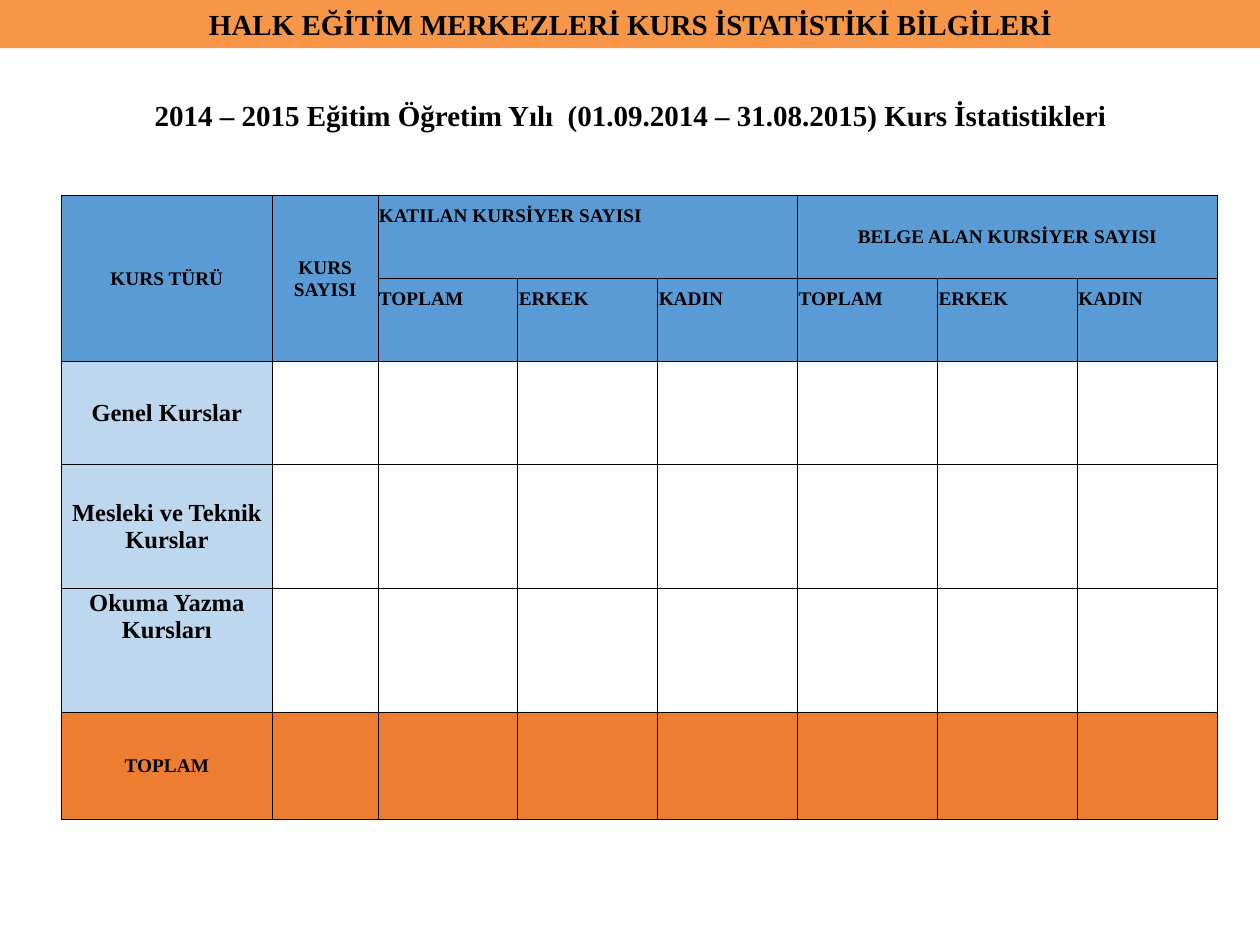
from lxml import etree
from pptx import Presentation
from pptx.dml.color import RGBColor
from pptx.enum.text import MSO_ANCHOR, PP_ALIGN
from pptx.oxml.ns import qn
from pptx.util import Cm, Pt

CENTER, LEFT = PP_ALIGN.CENTER, PP_ALIGN.LEFT
MIDDLE, TOP = MSO_ANCHOR.MIDDLE, MSO_ANCHOR.TOP

FONT = "Times New Roman"
BLACK = "000000"
BANNER_ORANGE = "F79646"
HEADER_BLUE = "5B9BD5"
COURSE_BLUE = "BDD7EE"
TOTAL_ORANGE = "ED7D31"

COLUMN_WIDTHS = [4.25, 2.13] + [2.82] * 6
ROW_HEIGHTS = [1.67, 1.67, 2.08, 2.5, 2.5, 2.15]
TOTAL_ROW = len(ROW_HEIGHTS) - 1
TRAINEE_GROUPS = [
    ("KATILAN KURSİYER SAYISI", LEFT, TOP),
    ("BELGE ALAN KURSİYER SAYISI", CENTER, MIDDLE),
]
BREAKDOWN = ["TOPLAM", "ERKEK", "KADIN"]
COURSES = [
    ("Genel Kurslar", MIDDLE),
    ("Mesleki ve Teknik Kurslar", MIDDLE),
    ("Okuma Yazma Kursları", TOP),
]


def paint(fill, color):
    fill.solid()
    fill.fore_color.rgb = RGBColor.from_string(color)


def write(frame, text, size=11, align=CENTER, color=BLACK, bold=True):
    paragraph = frame.paragraphs[0]
    paragraph.alignment = align
    run = paragraph.add_run()
    run.text = text
    run.font.name = FONT
    run.font.size = Pt(size)
    run.font.bold = bold
    run.font.color.rgb = RGBColor.from_string(color)


def add_heading(heading, text, top):
    heading.left, heading.top = Cm(0), Cm(top)
    heading.width, heading.height = Cm(25.4), Cm(0.97)
    frame = heading.text_frame
    frame.word_wrap = True
    frame.vertical_anchor = MIDDLE
    frame.margin_top = frame.margin_bottom = Cm(0.13)
    write(frame, text, size=16.6)


def add_borders(cell, color=BLACK, width=0.5):
    properties = cell._tc.get_or_add_tcPr()
    for side in ("lnL", "lnR", "lnT", "lnB"):
        border = etree.SubElement(properties, qn(f"a:{side}"), w=str(Pt(width)))
        solid = etree.SubElement(border, qn("a:solidFill"))
        etree.SubElement(solid, qn("a:srgbClr"), val=color)


def label(cell, text, anchor=MIDDLE, **text_format):
    cell.vertical_anchor = anchor
    write(cell.text_frame, text, **text_format)


def header_label(cell, text, align, anchor):
    if anchor == TOP:
        cell.margin_top = Cm(0.2)
    label(cell, text, anchor, align=align)


def cell_color(row, column):
    if row < 2:
        return HEADER_BLUE
    if row == TOTAL_ROW:
        return TOTAL_ORANGE
    return COURSE_BLUE if column == 0 else None


def add_grid(slide):
    table = slide.shapes.add_table(
        len(ROW_HEIGHTS), len(COLUMN_WIDTHS), Cm(1.24), Cm(3.94),
        Cm(sum(COLUMN_WIDTHS)), Cm(sum(ROW_HEIGHTS))).table
    table.first_row = table.horz_banding = False
    for column, width in zip(table.columns, COLUMN_WIDTHS):
        column.width = Cm(width)
    for r, height in enumerate(ROW_HEIGHTS):
        table.rows[r].height = Cm(height)
        for c in range(len(COLUMN_WIDTHS)):
            cell = table.cell(r, c)
            cell.margin_left = cell.margin_right = cell.margin_top = Cm(0.02)
            cell.margin_bottom = Cm(0)
            add_borders(cell)
            color = cell_color(r, c)
            if color:
                paint(cell.fill, color)
            else:
                cell.fill.background()
    return table


def fill_headers(table):
    for c, text in enumerate(["KURS TÜRÜ", "KURS SAYISI"]):
        table.cell(0, c).merge(table.cell(1, c))
        label(table.cell(0, c), text)
    for group, (text, align, anchor) in enumerate(TRAINEE_GROUPS):
        first = 2 + group * len(BREAKDOWN)
        table.cell(0, first).merge(table.cell(0, first + len(BREAKDOWN) - 1))
        header_label(table.cell(0, first), text, align, anchor)
        for offset, part in enumerate(BREAKDOWN):
            header_label(table.cell(1, first + offset), part, LEFT, TOP)


def fill_courses(table):
    for r, (course, anchor) in enumerate(COURSES, start=2):
        label(table.cell(r, 0), course, anchor, size=14)
    label(table.cell(TOTAL_ROW, 0), "TOPLAM")


def main():
    deck = Presentation()
    deck.slide_width, deck.slide_height = Cm(25.4), Cm(19.05)
    slide = deck.slides.add_slide(deck.slide_layouts[5])

    banner = slide.shapes.title
    add_heading(banner, "HALK EĞİTİM MERKEZLERİ KURS İSTATİSTİKİ BİLGİLERİ", top=0)
    paint(banner.fill, BANNER_ORANGE)

    period = slide.shapes.add_textbox(0, 0, 0, 0)
    add_heading(
        period,
        "2014 – 2015 Eğitim Öğretim Yılı  (01.09.2014 – 31.08.2015) Kurs İstatistikleri",
        top=1.83)

    table = add_grid(slide)
    fill_headers(table)
    fill_courses(table)
    deck.save("out.pptx")


if __name__ == "__main__":
    main()
